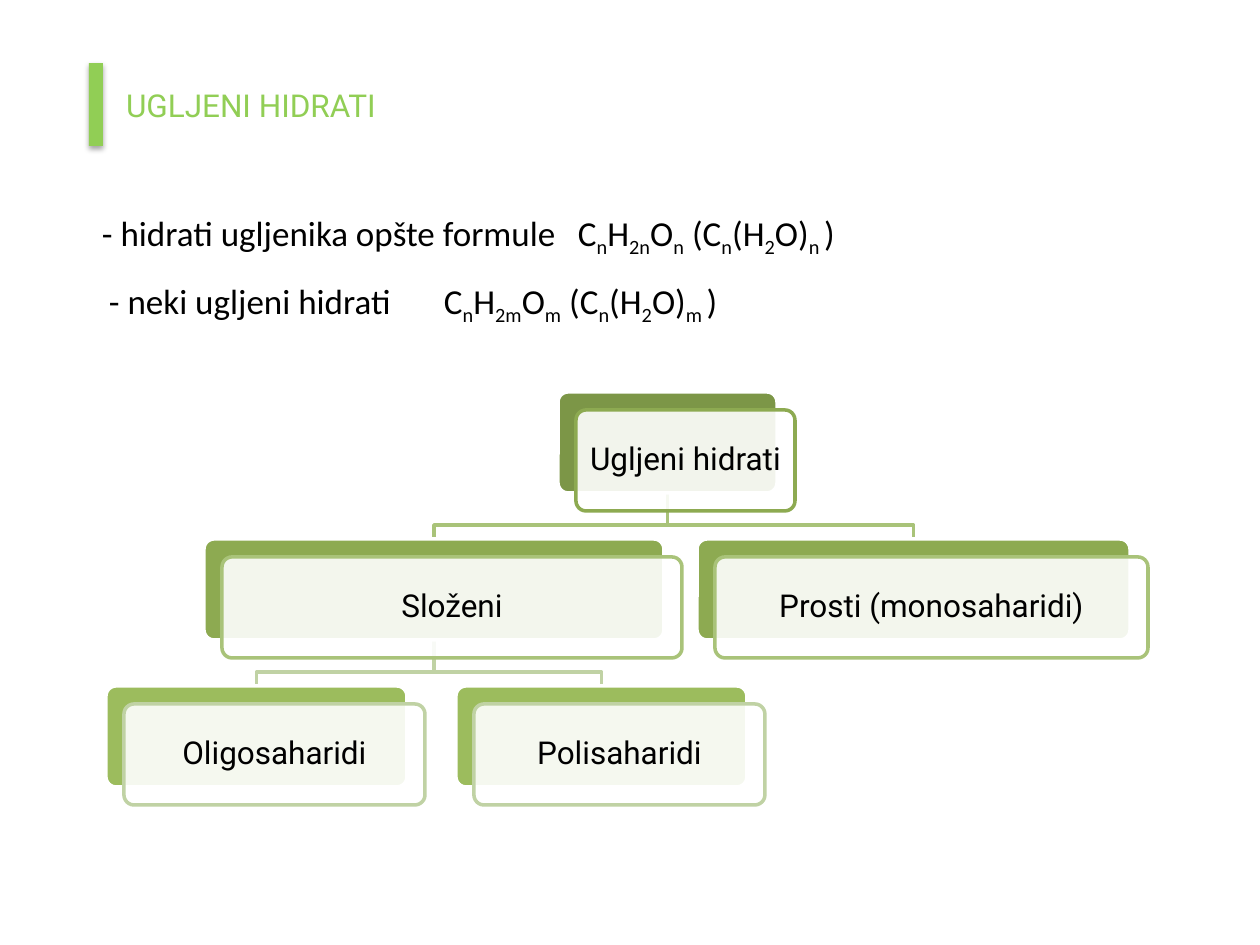
from dataclasses import dataclass

from lxml.etree import SubElement as Sub
from pptx import Presentation
from pptx.dml.color import RGBColor as Rgb
from pptx.enum.shapes import MSO_SHAPE as Kind
from pptx.enum.text import MSO_ANCHOR as Anchor, PP_ALIGN as Align
from pptx.oxml.ns import qn
from pptx.util import Emu, Pt


@dataclass(frozen=True)
class Theme:
    """Colours, fonts and type sizes of the slide."""
    accent: str = "91CE55"
    ink: str = "000000"
    paper: str = "FFFFFF"
    backs: tuple = ("7C9647", "8DAA51", "9CBC5D")
    edges: tuple = ("8DAA51", "A9C379", "C0D2A4")
    head: str = "Roboto"
    body: str = "Calibri"
    label: int = 18
    text: int = 20
    line: int = 2


THEME = Theme()
TOP, STEP, HIGH, SHIFT, DROP = 392, 147, 101, 18, 14
NODES = {
    "Ugljeni hidrati": (0, 558, 219, None),
    "Složeni": (1, 204, 460, "Ugljeni hidrati"),
    "Oligosaharidi": (2, 106, 301, "Složeni"),
    "Polisaharidi": (2, 456, 291, "Složeni"),
    "Prosti (monosaharidi)": (1, 697, 433, "Ugljeni hidrati"),
}
LINES = [
    ((89, 205, 1086, 67), 476,
     "- hidrati ugljenika opšte formule\tC|n|H|2n|O|n| (C|n|(H|2|O)|n |)"),
    ((96, 273, 1086, 67), 335,
     "- neki ugljeni hidrati\tC|n|H|2m|O|m| (C|n|(H|2|O)|m |)"),
]


def px(n):
    """Turn slide pixels into EMU."""
    return Emu(round(n * 914400 / 126))


def write(shape, text, *, font, size, color, align=Align.LEFT,
          anchor=Anchor.TOP, pad=(13, 6), before=0, lead=1.0, tab=None):
    """Set formatted text, with every second part between bars a subscript."""
    frame = shape.text_frame
    frame.word_wrap = True
    frame.vertical_anchor = anchor
    frame.margin_left = frame.margin_right = px(pad[0])
    frame.margin_top = frame.margin_bottom = px(pad[1])
    para = frame.paragraphs[0]
    para.alignment = align
    para.space_before = Pt(before)
    para.line_spacing = lead
    if tab:
        stops = Sub(para._p.get_or_add_pPr(), qn("a:tabLst"))
        Sub(stops, qn("a:tab"), pos=str(px(tab)), algn="l")
    for i, part in enumerate(text.split("|")):
        run = para.add_run()
        run.text = part
        run.font.name = font
        run.font.size = Pt(size)
        run.font.color.rgb = Rgb.from_string(color)
        if i % 2:
            run._r.get_or_add_rPr().set("baseline", "-25000")


def label(slide, box, text, **style):
    """Add a text box."""
    write(slide.shapes.add_textbox(*map(px, box)), text, **style)


def block(slide, kind, box, fill, edge=None, alpha=None):
    """Add a filled shape with an optional edge and opacity."""
    shape = slide.shapes.add_shape(kind, *map(px, box))
    shape.shadow.inherit = False
    shape.fill.solid()
    shape.fill.fore_color.rgb = Rgb.from_string(fill)
    if alpha:
        color = shape._element.spPr.find(".//" + qn("a:srgbClr"))
        Sub(color, qn("a:alpha"), val=str(alpha * 1000))
    if edge:
        shape.line.color.rgb = Rgb.from_string(edge)
        shape.line.width = Pt(THEME.line)
    else:
        shape.line.fill.background()
    return shape


def shade(shape):
    """Give a shape a soft shadow straight below it."""
    glow = Sub(shape._element.spPr.find(qn("a:effectLst")),
               qn("a:outerShdw"), blurRad=str(Pt(3.1)), dist=str(Pt(1.8)),
               dir="5400000", algn="ctr", rotWithShape="0")
    color = Sub(glow, qn("a:srgbClr"), val=THEME.ink)
    Sub(color, qn("a:alpha"), val="35000")


def level(rank):
    """Return the top of a tree level."""
    return TOP + STEP * rank


def link(slide, name):
    """Draw the bent line from a node's parent to the node."""
    rank, left, wide, boss = NODES[name]
    high, start, span, _ = NODES[boss]
    x, y, end = start + span / 2, level(high) + HIGH, level(rank)
    goal, bend = left + wide / 2, end - DROP
    pen = slide.shapes.build_freeform(px(x), px(y))
    path = [(x, bend), (goal, bend), (goal, end)]
    pen.add_line_segments([(px(a), px(b)) for a, b in path], close=False)
    shape = pen.convert_to_shape()
    shape.shadow.inherit = False
    shape.fill.background()
    shape.line.color.rgb = Rgb.from_string(THEME.edges[rank])
    shape.line.width = Pt(THEME.line)


def node(slide, name):
    """Draw a tree node as a dark card under a pale labelled one."""
    rank, left, wide, _ = NODES[name]
    top = level(rank)
    back = block(slide, Kind.ROUNDED_RECTANGLE, (left, top, wide, HIGH),
                 THEME.backs[rank], THEME.paper)
    front = block(slide, Kind.ROUNDED_RECTANGLE,
                  (left + SHIFT, top + SHIFT, wide, HIGH),
                  THEME.paper, THEME.edges[rank], alpha=90)
    for card in (back, front):
        card.adjustments[0] = 0.1
    write(front, name, font=THEME.head, size=THEME.label, color=THEME.ink,
          align=Align.CENTER, anchor=Anchor.MIDDLE, pad=(11, 11), lead=0.9)


def main():
    """Build and save the slide."""
    deck = Presentation()
    deck.slide_width, deck.slide_height = px(1260), px(945)
    slide = deck.slides.add_slide(deck.slide_layouts[6])
    shade(block(slide, Kind.RECTANGLE, (89, 63, 14, 83), THEME.accent))
    label(slide, (120, 82, 1051, 44), "UGLJENI HIDRATI", font=THEME.head,
          size=THEME.label, color=THEME.accent, pad=(6, 4))
    for box, tab, text in LINES:
        label(slide, box, text, font=THEME.body, size=THEME.text,
              color=THEME.ink, before=4, tab=tab)
    for name, spot in NODES.items():
        if spot[3]:
            link(slide, name)
    for name in NODES:
        node(slide, name)
    deck.save("out.pptx")


if __name__ == "__main__":
    main()
